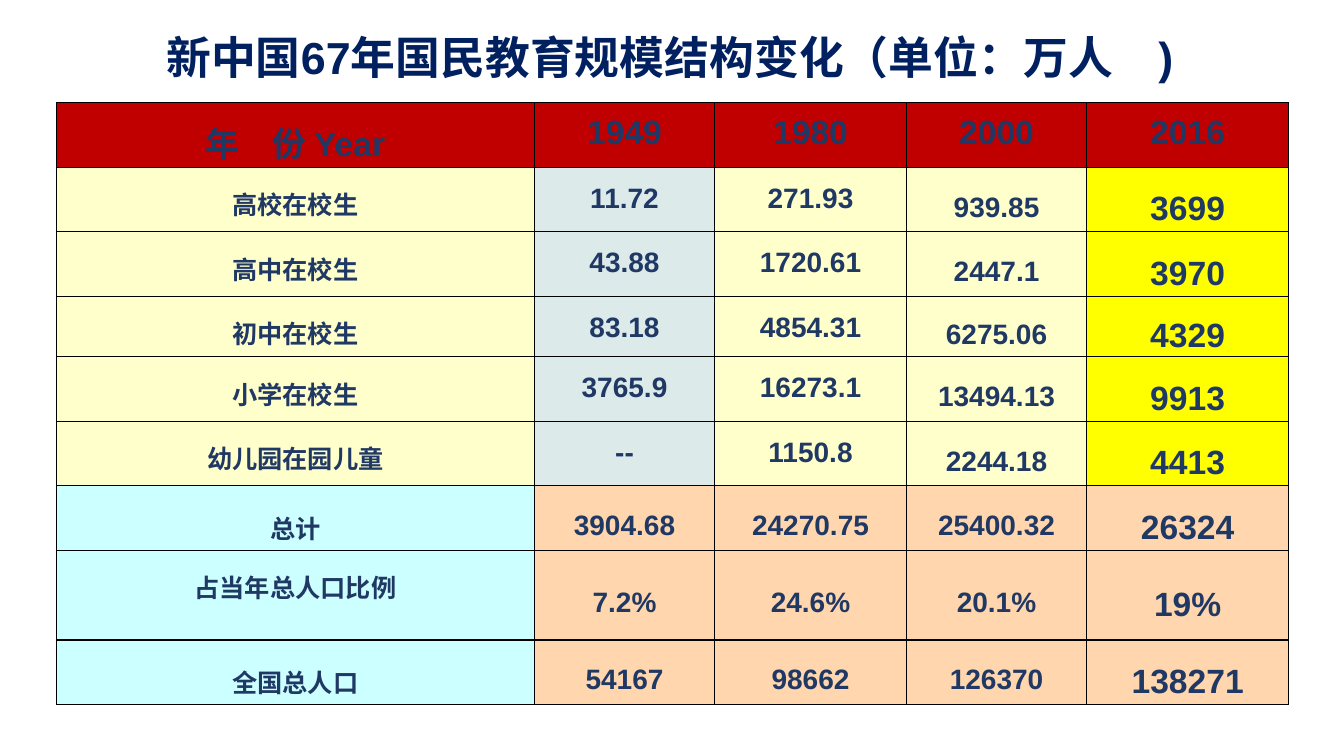
from lxml.etree import SubElement
from pptx import Presentation
from pptx.dml.color import RGBColor
from pptx.enum.text import MSO_ANCHOR, PP_ALIGN
from pptx.oxml.ns import qn
from pptx.util import Inches, Pt

COLORS = {
    "title": "002060", "text": "203864", "border": "000000",
    "header": "C00000", "label": "FFFFCC", "first_year": "DDEAEA",
    "latest_year": "FFFF00", "total_label": "CCFFFF", "total": "FFD6AD",
}
FONT = "Arial"
COLUMN_WIDTHS = [4.74, 1.79, 1.9, 1.79, 2]
ROW_HEIGHTS = [0.64, 0.64, 0.64, 0.6, 0.64, 0.64, 0.64, 0.89, 0.64]
COLUMN_SIZES = [18, 20, 20, 20, 24]
COLUMN_FILLS = ["label", "first_year", "label", "label", "latest_year"]
FIRST_TOTAL_ROW = 6
SHARE_ROW = 7
ROWS = [
    ["年　份 Year", "1949", "1980", "2000", "2016"],
    ["高校在校生", "11.72", "271.93", "939.85", "3699"],
    ["高中在校生", "43.88", "1720.61", "2447.1", "3970"],
    ["初中在校生", "83.18", "4854.31", "6275.06", "4329"],
    ["小学在校生", "3765.9", "16273.1", "13494.13", "9913"],
    ["幼儿园在园儿童", "--", "1150.8", "2244.18", "4413"],
    ["总计", "3904.68", "24270.75", "25400.32", "26324"],
    ["占当年总人口比例", "7.2%", "24.6%", "20.1%", "19%"],
    ["全国总人口", "54167", "98662", "126370", "138271"],
]


def write_text(frame, text, size=20, color="text", align=PP_ALIGN.CENTER, spacing=1.0):
    para = frame.paragraphs[0]
    para.alignment = align
    para.line_spacing = spacing
    span = para.add_run()
    span.text = text
    span.font.name = FONT
    span.font.size = Pt(size)
    span.font.bold = True
    span.font.color.rgb = RGBColor.from_string(COLORS[color])


def set_borders(cell, width=1):
    properties = cell._tc.get_or_add_tcPr()
    for position, side in enumerate(("a:lnL", "a:lnR", "a:lnT", "a:lnB")):
        line = SubElement(properties, qn(side), w=str(Pt(width)))
        fill = SubElement(line, qn("a:solidFill"))
        SubElement(fill, qn("a:srgbClr"), val=COLORS["border"])
        # Borders come before the fill in the cell properties
        properties.insert(position, line)


def cell_format(row, column):
    """Return fill, text size, line spacing and anchor for a table position."""
    if row == 0:
        return "header", 24, 1.3, MSO_ANCHOR.TOP
    is_total = row >= FIRST_TOTAL_ROW
    fill = COLUMN_FILLS[column]
    if is_total:
        fill = "total" if column else "total_label"
    centred = column >= 3 or is_total
    if (row, column) == (SHARE_ROW, 0):
        centred = False
    anchor = MSO_ANCHOR.MIDDLE if centred else MSO_ANCHOR.TOP
    return fill, COLUMN_SIZES[column], 1.5, anchor


def add_title(page, text):
    title = page.shapes.title
    title.left, title.top = Inches(0.31), Inches(0.25)
    title.width, title.height = Inches(12.19), Inches(0.63)
    frame = title.text_frame
    frame.word_wrap = True
    frame.vertical_anchor = MSO_ANCHOR.MIDDLE
    frame.margin_left = Inches(1.34)
    frame.margin_top = frame.margin_bottom = 0
    write_text(frame, text, size=32, color="title", align=PP_ALIGN.LEFT)


def add_education_table(page):
    table = page.shapes.add_table(
        len(ROWS), len(COLUMN_WIDTHS), Inches(0.56), Inches(1.02),
        Inches(sum(COLUMN_WIDTHS)), Inches(sum(ROW_HEIGHTS))).table
    table.horz_banding = False
    table.first_row = False
    for column, width in zip(table.columns, COLUMN_WIDTHS):
        column.width = Inches(width)
    for row, height in zip(table.rows, ROW_HEIGHTS):
        row.height = Inches(height)

    for row, values in enumerate(ROWS):
        for column, value in enumerate(values):
            fill, size, spacing, anchor = cell_format(row, column)
            cell = table.cell(row, column)
            cell.fill.solid()
            cell.fill.fore_color.rgb = RGBColor.from_string(COLORS[fill])
            cell.vertical_anchor = anchor
            cell.margin_left = cell.margin_right = Inches(0.07)
            cell.margin_top = cell.margin_bottom = 0
            set_borders(cell)
            write_text(cell.text_frame, value, size=size, spacing=spacing)


def main():
    deck = Presentation()
    deck.slide_width, deck.slide_height = Inches(13.33), Inches(7.5)
    page = deck.slides.add_slide(deck.slide_layouts[5])
    add_title(page, "新中国67年国民教育规模结构变化（单位：万人　)")
    add_education_table(page)
    deck.save("out.pptx")


if __name__ == "__main__":
    main()
